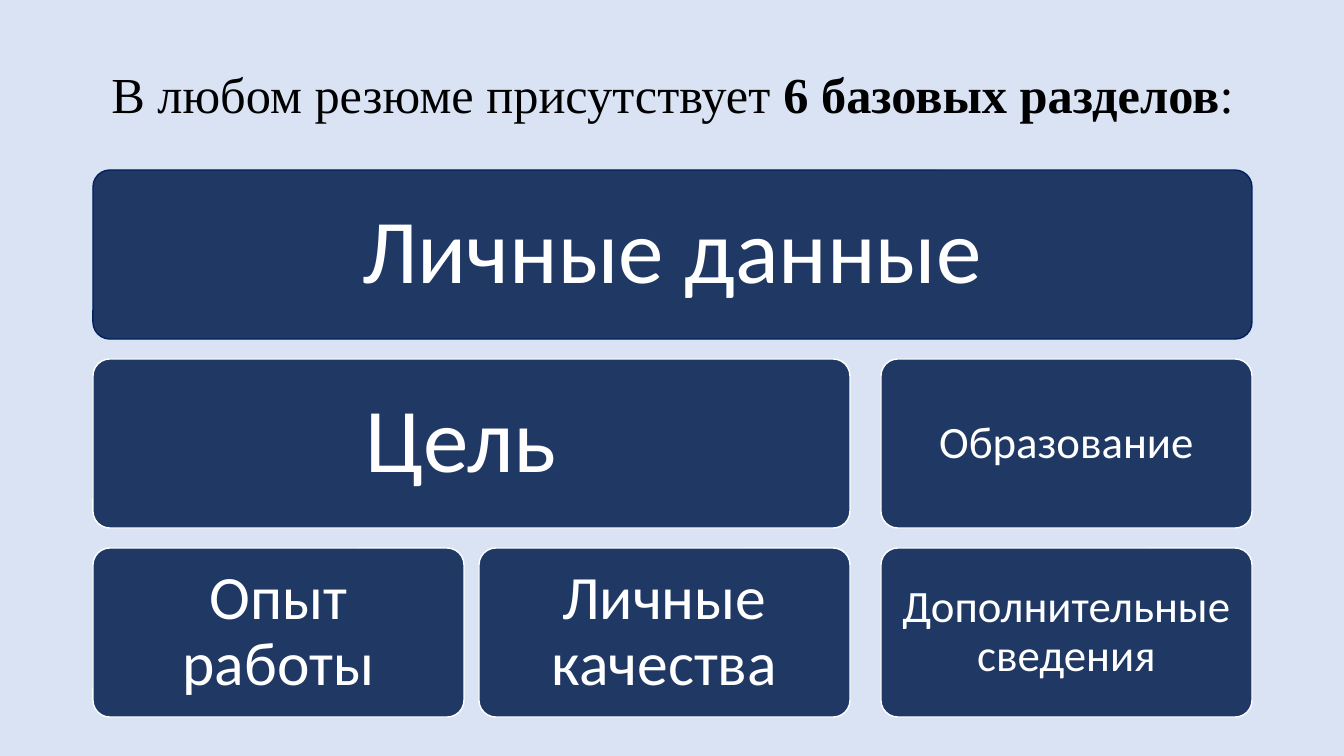
from pptx import Presentation
from pptx.dml.color import RGBColor
from pptx.enum.shapes import MSO_SHAPE as Shape
from pptx.enum.text import MSO_ANCHOR as Anchor, PP_ALIGN as Align
from pptx.util import Pt

PX = 914400 / 100.8
COLORS = {"back": "DAE3F3", "card": "203864", "edge": "002060",
          "white": "FFFFFF", "black": "000000"}
LEFTS = (93, 479, 881)
TOP, ROW_STEP = 170, 189
CARD_W, CARD_H = 371, 169
INSETS = {65: 27, 44: 18, 32: 12}
CARDS = [
    ("Личные данные", 0, 0, 2, 65, "edge"),
    ("Цель ", 1, 0, 1, 65, "white"),
    ("Опыт работы", 2, 0, 0, 44, "white"),
    ("Личные качества", 2, 1, 1, 44, "white"),
    ("Образование", 1, 2, 2, 32, "white"),
    ("Дополнительные сведения", 2, 2, 2, 32, "white"),
]


def px(n):
    return round(n * PX)


def rgb(name):
    return RGBColor.from_string(COLORS[name])


class Deck:
    """Holds the style and the current slide."""

    def __init__(self):
        self.prs = Presentation()
        self.prs.slide_width, self.prs.slide_height = px(1344), px(756)
        self.slide = self.prs.slides.add_slide(self.prs.slide_layouts[5])
        fill = self.slide.background.fill
        fill.solid()
        fill.fore_color.rgb = rgb("back")

    def format_run(self, r, font, size, color, bold=False):
        r.font.name, r.font.size, r.font.bold = font, Pt(size), bold
        r.font.color.rgb = rgb(color)

    def format_text(self, tf):
        tf.word_wrap = True
        tf.vertical_anchor = Anchor.MIDDLE
        p = tf.paragraphs[0]
        p.alignment, p.line_spacing = Align.CENTER, 0.9
        return p

    def title(self, x, y, w, h, parts):
        sp = self.slide.shapes.title
        sp.left, sp.top, sp.width, sp.height = map(px, (x, y, w, h))
        p = self.format_text(sp.text_frame)
        for text, bold in parts:
            r = p.add_run()
            r.text = text
            self.format_run(r, "Times New Roman", 36, "black", bold)

    def card(self, text, row, first, last, size, edge):
        x = LEFTS[first]
        w = LEFTS[last] + CARD_W - x
        box = map(px, (x, TOP + row * ROW_STEP, w, CARD_H))
        sp = self.slide.shapes.add_shape(Shape.ROUNDED_RECTANGLE, *box)
        sp.adjustments[0] = 0.1
        sp.shadow.inherit = False
        sp.fill.solid()
        sp.fill.fore_color.rgb = rgb("card")
        sp.line.color.rgb = rgb(edge)
        sp.line.width = Pt(1)
        tf = sp.text_frame
        tf.text = text
        inset = px(INSETS[size])
        tf.margin_left = tf.margin_right = inset
        tf.margin_top = tf.margin_bottom = inset
        p = self.format_text(tf)
        self.format_run(p.runs[0], "Calibri", size, "white")


def main():
    deck = Deck()
    deck.title(93, 24, 1159, 146, [("В любом резюме присутствует ", False),
                                   ("6 базовых разделов", True), (":", False)])
    for card in CARDS:
        deck.card(*card)
    deck.prs.save("out.pptx")


if __name__ == "__main__":
    main()
